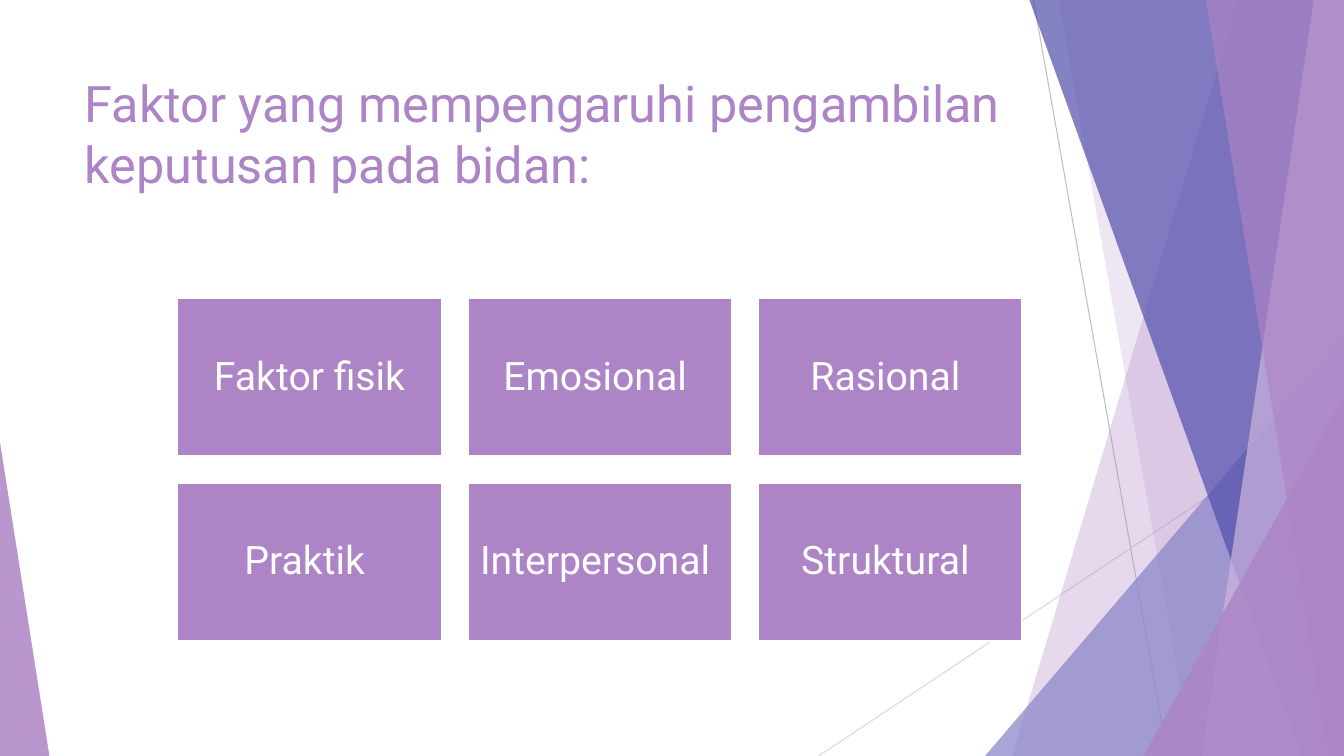
from lxml.etree import SubElement
from pptx import Presentation
from pptx.dml.color import RGBColor
from pptx.enum.shapes import MSO_CONNECTOR, MSO_SHAPE
from pptx.enum.text import MSO_ANCHOR, MSO_AUTO_SIZE, PP_ALIGN
from pptx.oxml.ns import qn
from pptx.util import Inches, Pt

PURPLE = RGBColor(0xAD, 0x84, 0xC6)
PALE_PURPLE = RGBColor(0xCE, 0xB5, 0xDD)
PERIWINKLE = RGBColor(0x87, 0x84, 0xC7)
INDIGO = RGBColor(0x52, 0x4E, 0xAB)
GRAY = RGBColor(0xBF, 0xBF, 0xBF)
LIGHT_GRAY = RGBColor(0xD9, 0xD9, 0xD9)
WHITE = RGBColor(0xFF, 0xFF, 0xFF)

FONT = "Roboto"
WIDTH, HEIGHT = 13.33, 7.5
TITLE = "Faktor yang mempengaruhi pengambilan keputusan pada bidan:"
TITLE_BOX = (0.74, 0.67, 9.4, 1.44)
FACTORS = [
    ["Faktor fisik", "Emosional ", "Rasional "],
    ["Praktik ", "Interpersonal ", "Struktural "],
]
CARD_LEFT, CARD_TOP = 1.76, 2.96
CARD_WIDTH, CARD_HEIGHT = 2.62, 1.57
CARD_GAP = 0.26
THIN_LINES = [
    ((10.25, 0, 11.58, HEIGHT), GRAY),
    ((WIDTH, 4.03, 8.12, HEIGHT), LIGHT_GRAY),
]
# kind, geometry, colour, opacity: bands give top and bottom x, triangles give left, top, width, apex
DECORATIONS = [
    ("band", (12.28, 10.04), PURPLE, 30),
    ("band", (10.5, 11.83), PURPLE, 20),
    ("triangle", (9.77, 3.33, 3.56, 1), PERIWINKLE, 72),
    ("band", (10.21, 12.91), INDIGO, 70),
    ("band", (13.03, 11.92), PALE_PURPLE, 70),
    ("band", (11.96, 13.18), PURPLE, 65),
    ("triangle", (11.34, 3.93, 1.99, 1), PURPLE, 80),
    ("triangle", (0, 4.39, 0.49, 0), PURPLE, 85),
]


def inches(values):
    return [Inches(value) for value in values]


def apply_format(target, values):
    for name, value in values.items():
        setattr(target, name, value)


def add_thin_line(slide, ends, color):
    connector = slide.shapes.add_connector(MSO_CONNECTOR.STRAIGHT, *inches(ends))
    connector.line.color.rgb = color
    connector.line.width = Pt(0.75)
    SubElement(connector._element.spPr, qn("a:effectLst"))


def add_band(slide, top_x, bottom_x):
    corners = [(WIDTH, 0), (WIDTH, HEIGHT), (bottom_x, HEIGHT)]
    builder = slide.shapes.build_freeform(Inches(top_x), 0)
    builder.add_line_segments([inches(corner) for corner in corners], close=True)
    return builder.convert_to_shape()


def add_triangle(slide, left, top, width, apex):
    box = inches((left, top, width, HEIGHT - top))
    shape = slide.shapes.add_shape(MSO_SHAPE.ISOSCELES_TRIANGLE, *box)
    shape.adjustments[0] = apex
    return shape


def add_decoration(slide, kind, geometry, color, opacity):
    shape = {"band": add_band, "triangle": add_triangle}[kind](slide, *geometry)
    shape.shadow.inherit = False
    shape.fill.solid()
    shape.fill.fore_color.rgb = color
    shape.line.fill.background()
    color_element = shape._element.spPr.find(qn("a:solidFill"))[0]
    SubElement(color_element, qn("a:alpha"), val=str(opacity * 1000))


def write_text(shape, text, frame_format, paragraph_format, size, color):
    frame = shape.text_frame
    frame.text = text
    paragraph = frame.paragraphs[0]
    apply_format(frame, frame_format)
    apply_format(paragraph, paragraph_format)
    font = paragraph.runs[0].font
    apply_format(font, {"name": FONT, "size": Pt(size)})
    font.color.rgb = color


def add_title(slide):
    title = slide.shapes.title
    apply_format(title, dict(zip(("left", "top", "width", "height"), inches(TITLE_BOX))))
    frame_format = {"word_wrap": True, "auto_size": MSO_AUTO_SIZE.NONE,
                    "vertical_anchor": MSO_ANCHOR.TOP}
    write_text(title, TITLE, frame_format, {"alignment": PP_ALIGN.LEFT}, 36, PURPLE)


def add_card(slide, row, column, text):
    left = CARD_LEFT + column * (CARD_WIDTH + CARD_GAP)
    top = CARD_TOP + row * (CARD_HEIGHT + CARD_GAP)
    box = inches((left, top, CARD_WIDTH, CARD_HEIGHT))
    card = slide.shapes.add_shape(MSO_SHAPE.RECTANGLE, *box)
    card.shadow.inherit = False
    card.fill.solid()
    card.fill.fore_color.rgb = PURPLE
    card.line.color.rgb = WHITE
    card.line.width = Pt(1.5)
    frame_format = {f"margin_{side}": Inches(0.12) for side in ("left", "top", "right", "bottom")}
    frame_format.update(word_wrap=True, vertical_anchor=MSO_ANCHOR.MIDDLE)
    paragraph_format = {"alignment": PP_ALIGN.CENTER, "line_spacing": 0.9}
    write_text(card, text, frame_format, paragraph_format, 28, WHITE)


def main():
    """Build the slide on factors that shape midwives' decisions."""
    presentation = Presentation()
    presentation.slide_width, presentation.slide_height = inches((WIDTH, HEIGHT))
    slide = presentation.slides.add_slide(presentation.slide_layouts[5])
    for ends, color in THIN_LINES:
        add_thin_line(slide, ends, color)
    for decoration in DECORATIONS:
        add_decoration(slide, *decoration)
    add_title(slide)
    for row, factors in enumerate(FACTORS):
        for column, factor in enumerate(factors):
            add_card(slide, row, column, factor)
    presentation.save("out.pptx")


if __name__ == "__main__":
    main()
